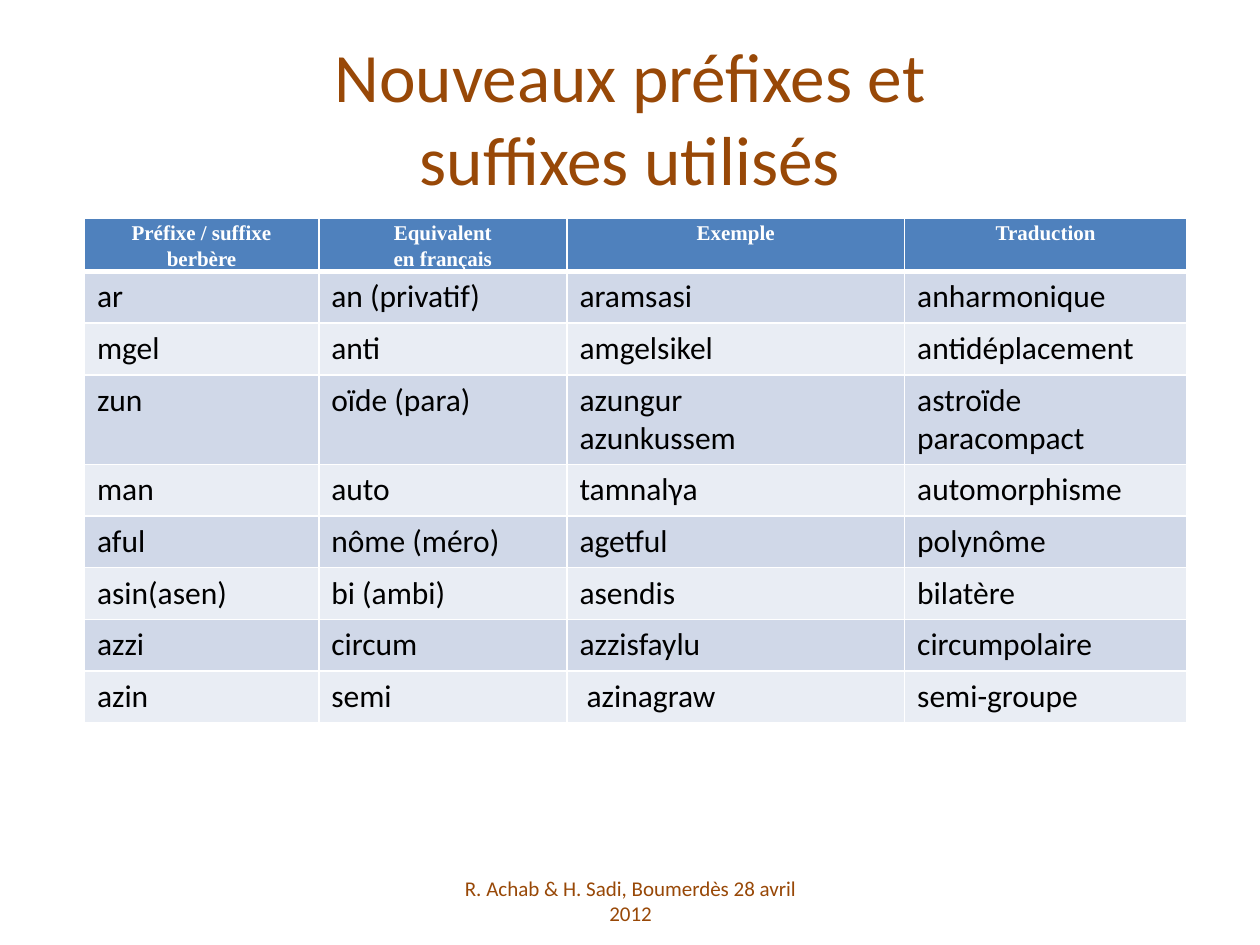
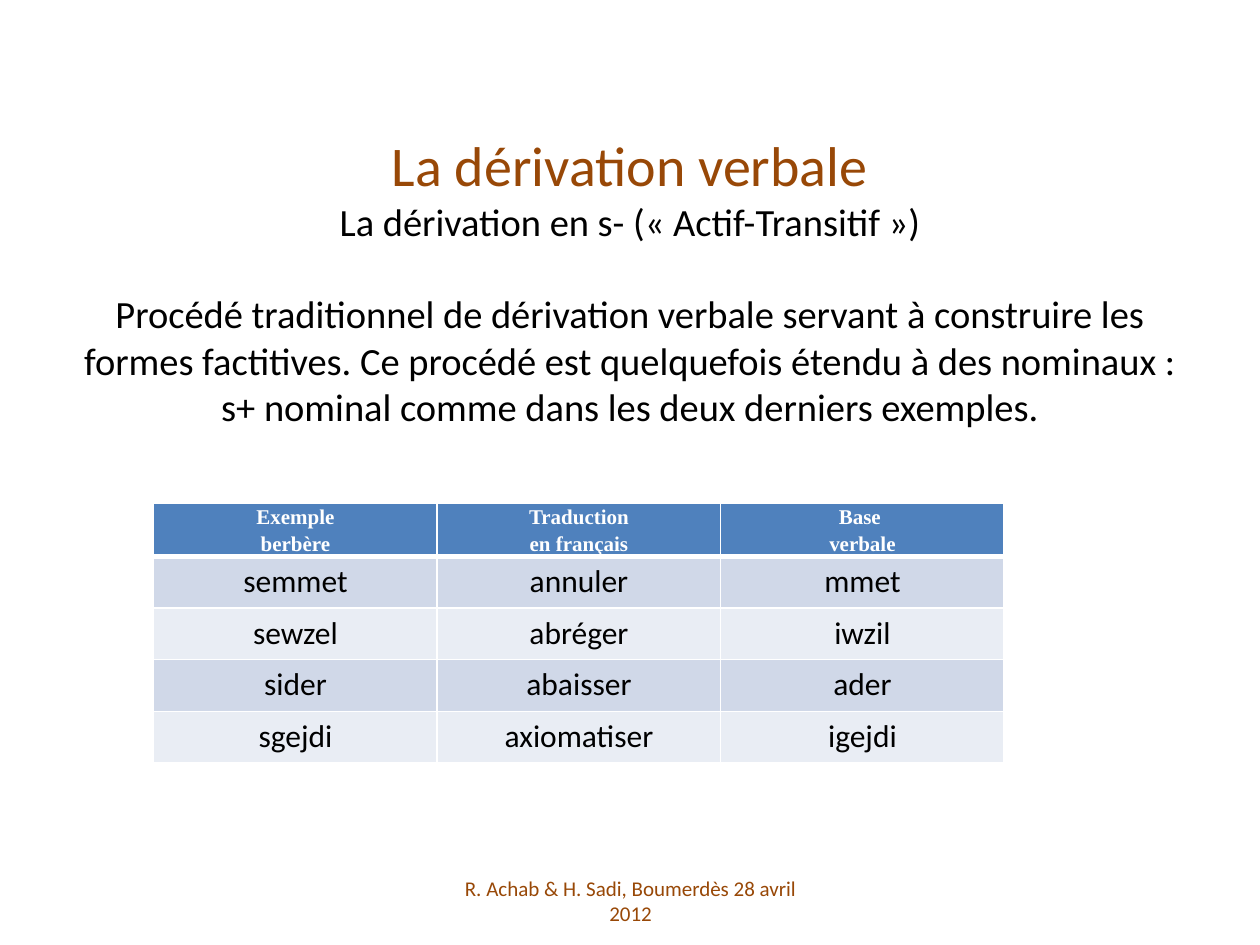
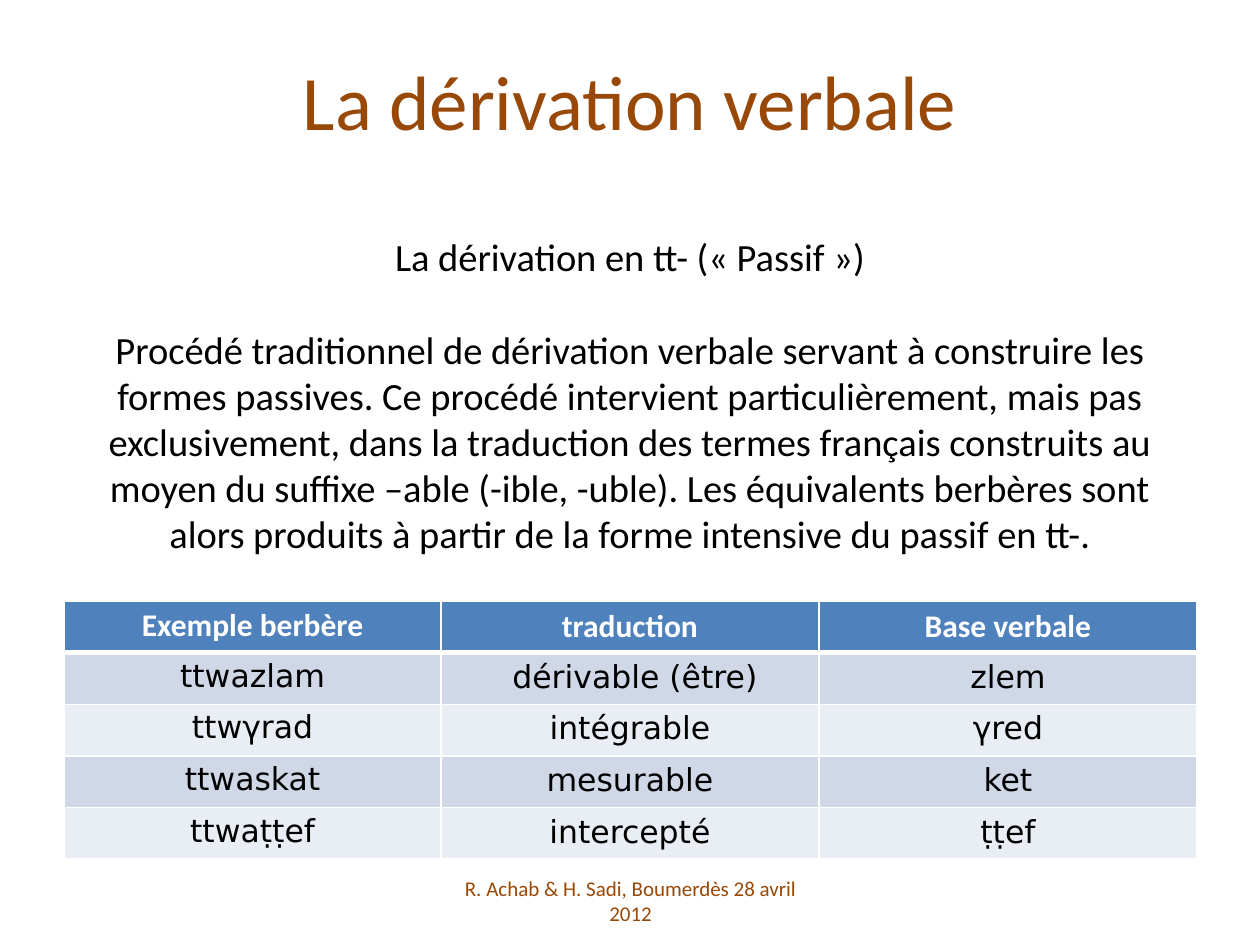
"""Build three slides on Berber affixes and verbal derivation."""
from lxml import etree
from pptx import Presentation
from pptx import util as u
from pptx.dml import color as dml
from pptx.enum import text as t
from pptx.oxml import ns

COLOURS = {"brown": "984807", "black": "000000", "white": "FFFFFF",
           "header": "4F81BD", "dark_band": "D0D8E8", "light_band": "E9EDF4"}
CENTRE, LEFT = t.PP_ALIGN.CENTER, t.PP_ALIGN.LEFT
TIGHT = {"margin_left": u.Inches(0.07), "margin_right": u.Inches(0.07),
         "margin_top": 0, "margin_bottom": 0}
FOOTER = "R. Achab & H. Sadi, Boumerdès 28 avril 2012"


def font(size, colour="black", name="Calibri", bold=False):
    return {"size": u.Pt(size), "color": colour, "name": name, "bold": bold}


TEXT = font(22)
CELL = font(18)
SMALL_HEADER = font(12, "white", "Times New Roman", True)


def set_all(target, values):
    for name, value in values.items():
        setattr(target, name, value)


def rgb(name):
    return dml.RGBColor.from_string(COLOURS[name])


class Slides:
    def __init__(self):
        self.deck = Presentation()
        self.deck.slide_width, self.deck.slide_height = u.Inches(10), u.Inches(7.5)
        self.slide = None

    def box(self, shape, at):
        places = map(u.Inches, at)
        set_all(shape, dict(zip(("left", "top", "width", "height"), places)))
        set_all(shape.text_frame, {"word_wrap": True, "auto_size": t.MSO_AUTO_SIZE.NONE,
                                   "vertical_anchor": t.MSO_ANCHOR.MIDDLE})
        return shape.text_frame

    def add_lines(self, frame, lines, layout):
        for index, (words, style, gap) in enumerate(lines):
            para = frame.add_paragraph() if index else frame.paragraphs[0]
            set_all(para, {**layout, "space_before": u.Pt(gap)})
            span = para.add_run()
            span.text = words
            set_all(span.font, {key: style[key] for key in ("size", "name", "bold")})
            span.font.color.rgb = rgb(style["color"])

    def new_slide(self, title_lines, title_height):
        self.slide = self.deck.slides.add_slide(self.deck.slide_layouts[5])
        frame = self.box(self.slide.shapes.title, (0.5, 0.3, 9, title_height))
        self.add_lines(frame, title_lines, {"alignment": CENTRE})
        self.footer()

    def footer(self):
        at = (3.42, 6.95, 3.17, 0.4)
        shape = self.slide.shapes.add_textbox(*map(u.Inches, at))
        self.add_lines(self.box(shape, at), [(FOOTER, font(12, "brown"), 0)],
                       {"alignment": CENTRE})

    def borders(self, cell, row):
        widths = {"L": 1, "R": 1, "T": 3 if row == 1 else 1, "B": 1 if row else 3}
        props = cell._tc.get_or_add_tcPr()
        for index, (side, width) in enumerate(widths.items()):
            line = etree.Element(ns.qn("a:ln" + side), w=str(u.Pt(width)))
            fill = etree.SubElement(line, ns.qn("a:solidFill"))
            etree.SubElement(fill, ns.qn("a:srgbClr"), val=COLOURS["white"])
            props.insert(index, line)

    def table(self, corner, widths, rows, header, body=CELL, align=CENTRE,
              tight=lambda row, column: row == 0):
        row_height = 0.41
        size = sum(widths), row_height * len(rows)
        frame = self.slide.shapes.add_table(len(rows), len(widths),
                                            *map(u.Inches, (*corner, *size)))
        grid = frame.table
        for column, width in zip(grid.columns, widths):
            column.width = u.Inches(width)
        for r, row in enumerate(rows):
            grid.rows[r].height = u.Inches(row_height)
            band = ("light_band", "dark_band")[r % 2] if r else "header"
            for c, words in enumerate(row):
                cell = grid.cell(r, c)
                cell.fill.solid()
                cell.fill.fore_color.rgb = rgb(band)
                self.borders(cell, r)
                layout = {"alignment": align if r else CENTRE}
                if tight(r, c):
                    set_all(cell, TIGHT)
                    layout["line_spacing"] = 1.15
                style = body if r else header
                lines = [(line, style, 0) for line in words.split("\n")]
                self.add_lines(cell.text_frame, lines, layout)


def affixes(slides):
    heading = font(39.6, "brown")
    slides.new_slide([("Nouveaux préfixes et", heading, 0),
                      ("suffixes utilisés", heading, 0)], 1.25)
    slides.table((0.67, 1.73), [1.86, 1.97, 2.68, 2.24], [
        ("Préfixe / suffixe\nberbère", "Equivalent\nen français", "Exemple", "Traduction"),
        ("ar", "an (privatif)", "aramsasi", "anharmonique"),
        ("mgel", "anti", "amgelsikel", "antidéplacement"),
        ("zun", "oïde (para)", "azungur\nazunkussem", "astroïde paracompact"),
        ("man", "auto", "tamnalγa", "automorphisme"),
        ("aful", "nôme (méro)", "agetful", "polynôme"),
        ("asin(asen)", "bi (ambi)", "asendis", "bilatère"),
        ("azzi", "circum", "azzisfaylu", "circumpolaire"),
        ("azin", "semi", " azinagraw", "semi-groupe"),
    ], SMALL_HEADER, align=LEFT)


def active_derivation(slides):
    slides.new_slide([
        ("La dérivation verbale", font(32, "brown"), 0),
        ("La dérivation en s- (« Actif-Transitif »)", TEXT, 0),
        ("Procédé traditionnel de dérivation verbale servant à construire les formes "
         "factitives. Ce procédé est quelquefois étendu à des nominaux : s+ nominal "
         "comme dans les deux derniers exemples.", TEXT, 26.5),
    ], 3.84)
    slides.table((1.22, 3.99), [2.25] * 3, [
        ("Exemple\nberbère", "Traduction\nen français", "Base \nverbale"),
        ("semmet", "annuler", "mmet"),
        ("sewzel", "abréger", "iwzil"),
        ("sider", "abaisser", "ader"),
        ("sgejdi", "axiomatiser", "igejdi"),
    ], SMALL_HEADER)


def passive_derivation(slides):
    slides.new_slide([
        ("La dérivation verbale", font(44, "brown"), 0),
        ("La dérivation en tt- (« Passif »)", TEXT, 50),
        ("Procédé traditionnel de dérivation verbale servant à construire les formes "
         "passives. Ce procédé intervient particulièrement, mais pas exclusivement, dans "
         "la traduction des termes français construits au moyen du suffixe –able (-ible, "
         "-uble). Les équivalents berbères sont alors produits à partir de la forme "
         "intensive du passif en tt-.", TEXT, 26.5),
    ], 4.24)
    slides.table((0.51, 4.77), [2.99, 3, 3], [
        ("Exemple berbère", "traduction", "Base verbale"),
        ("ttwazlam", " dérivable (être)", "zlem"),
        ("ttwγrad", "intégrable", "γred"),
        ("ttwaskat", "mesurable", "ket"),
        ("ttwaṭṭef", "intercepté", "ṭṭef"),
    ], font(18, "white", bold=True), font(18, name="DejaVu Sans"),
        tight=lambda row, column: column == 0)


def main():
    slides = Slides()
    for build in (affixes, active_derivation, passive_derivation):
        build(slides)
    slides.deck.save("out.pptx")


if __name__ == "__main__":
    main()
